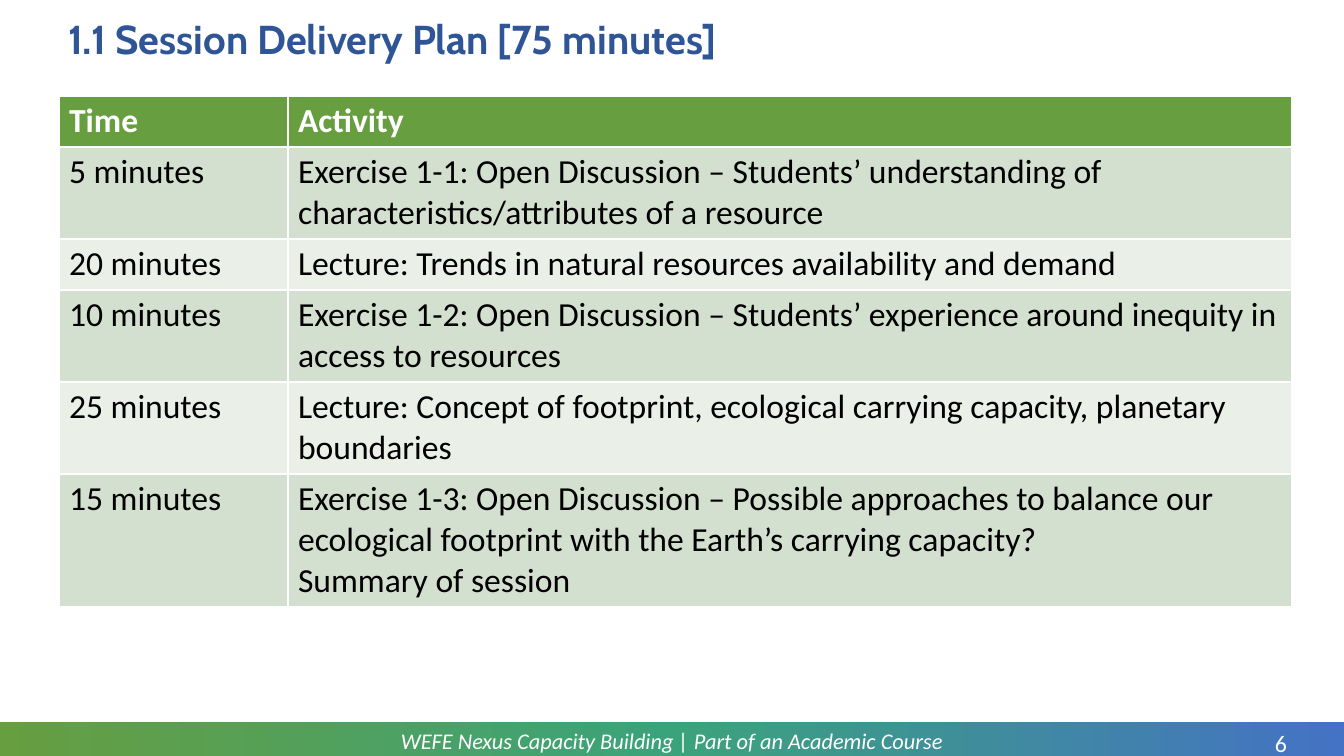
from copy import deepcopy
from dataclasses import dataclass

from pptx import Presentation
from pptx.dml.color import RGBColor
from pptx.enum.shapes import MSO_SHAPE
from pptx.enum.text import MSO_ANCHOR, MSO_AUTO_SIZE, PP_ALIGN
from pptx.oxml.ns import qn
from pptx.slide import Slide
from pptx.table import _Cell
from pptx.text.text import Font
from pptx.util import Emu, Pt

EMU_PER_PX = 12192000 / 1344
COLOURS = {
    "white": "FFFFFF",
    "black": "000000",
    "title": "2F5597",
    "green": "669E40",
    "teal": "3BA37B",
    "blue": "4472C4",
    "odd_row": "D3DFCF",
    "even_row": "EAF0E8",
}
BODY_FONT = "Calibri"


@dataclass(frozen=True)
class Box:
    left: int
    top: int
    width: int
    height: int

    def emu(self) -> tuple[Emu, Emu, Emu, Emu]:
        return px(self.left), px(self.top), px(self.width), px(self.height)


@dataclass(frozen=True)
class Session:
    time: str
    activity: str
    height: int


@dataclass(frozen=True)
class FooterText:
    text: str
    box: Box
    size: int
    italic: bool


TITLE_BOX = Box(58, 13, 1225, 57)
BAND_BOX = Box(0, 722, 1344, 38)
PLAN_BOX = Box(59, 96, 1233, 511)
COLUMN_WIDTHS = (229, 1004)
SESSIONS = (
    Session("Time", "Activity", 51),
    Session("5 minutes", "Exercise 1-1: Open Discussion – Students’ understanding of "
            "characteristics/attributes of a resource", 92),
    Session("20 minutes", "Lecture: Trends in natural resources availability and demand", 51),
    Session("10 minutes", "Exercise 1-2: Open Discussion – Students’ experience around "
            "inequity in access to resources", 92),
    Session("25 minutes", "Lecture: Concept of footprint, ecological carrying capacity, "
            "planetary boundaries", 92),
    Session("15 minutes", "Exercise 1-3: Open Discussion – Possible approaches to balance our "
            "ecological footprint with the Earth’s carrying capacity?\nSummary of session", 133),
)
FOOTER_TEXTS = (
    FooterText("WEFE Nexus Capacity Building | Part of an Academic Course",
               Box(93, 723, 1158, 36), 16, True),
    FooterText("6", Box(1251, 728, 60, 29), 17, False),
)


def px(length: int) -> Emu:
    return Emu(round(length * EMU_PER_PX))


def rgb(name: str) -> RGBColor:
    return RGBColor.from_string(COLOURS[name])


def style_font(font: Font, name: str, size: float, colour: str,
               bold: bool = False, italic: bool = False) -> None:
    font.name = name
    font.size = Pt(size)
    font.bold = bold
    font.italic = italic
    font.color.rgb = rgb(colour)


def draw_band(slide: Slide) -> None:
    band = slide.shapes.add_shape(MSO_SHAPE.RECTANGLE, *BAND_BOX.emu())
    band.shadow.inherit = False
    band.line.fill.background()
    band.fill.gradient()
    band.fill.gradient_angle = 0
    stop_list = band._element.spPr.find(f".//{qn('a:gsLst')}")
    stop_list.append(deepcopy(stop_list[-1]))
    for index, (stop, colour) in enumerate(
            zip(band.fill.gradient_stops, ("green", "teal", "blue"))):
        stop.position = index / 2
        stop.color.rgb = rgb(colour)


def draw_footer_text(slide: Slide, footer: FooterText) -> None:
    frame = slide.shapes.add_textbox(*footer.box.emu()).text_frame
    frame.word_wrap = True
    frame.margin_left = frame.margin_right = frame.margin_top = frame.margin_bottom = 0
    frame.vertical_anchor = MSO_ANCHOR.MIDDLE
    frame.text = footer.text
    paragraph = frame.paragraphs[0]
    paragraph.alignment = PP_ALIGN.CENTER
    style_font(paragraph.font, BODY_FONT, footer.size, "white", italic=footer.italic)


def draw_title(slide: Slide) -> None:
    title = slide.shapes.title
    title.left, title.top, title.width, title.height = TITLE_BOX.emu()
    frame = title.text_frame
    frame.text = "1.1 Session Delivery Plan [75 minutes]"
    frame.auto_size = MSO_AUTO_SIZE.NONE
    frame.vertical_anchor = MSO_ANCHOR.MIDDLE
    paragraph = frame.paragraphs[0]
    paragraph.alignment = PP_ALIGN.LEFT
    paragraph.line_spacing = 0.9
    style_font(paragraph.font, "Cabin", 28.8, "title", bold=True)


def fill_cell(cell: _Cell, text: str, row: int) -> None:
    is_header = row == 0
    cell.fill.solid()
    cell.fill.fore_color.rgb = rgb(
        "green" if is_header else "odd_row" if row % 2 else "even_row")
    cell.text = text
    for paragraph in cell.text_frame.paragraphs:
        style_font(paragraph.font, BODY_FONT, 24,
                   "white" if is_header else "black", bold=is_header)


def draw_plan(slide: Slide) -> None:
    plan = slide.shapes.add_table(
        len(SESSIONS), len(COLUMN_WIDTHS), *PLAN_BOX.emu()).table
    for column, width in zip(plan.columns, COLUMN_WIDTHS):
        column.width = px(width)
    for row, session in enumerate(SESSIONS):
        plan.rows[row].height = px(session.height)
        for column, text in enumerate((session.time, session.activity)):
            fill_cell(plan.cell(row, column), text, row)


def main() -> None:
    deck = Presentation()
    deck.slide_width, deck.slide_height = px(1344), px(756)
    slide = deck.slides.add_slide(deck.slide_layouts[5])
    draw_band(slide)
    for footer in FOOTER_TEXTS:
        draw_footer_text(slide, footer)
    draw_title(slide)
    draw_plan(slide)
    deck.save("out.pptx")


if __name__ == "__main__":
    main()
